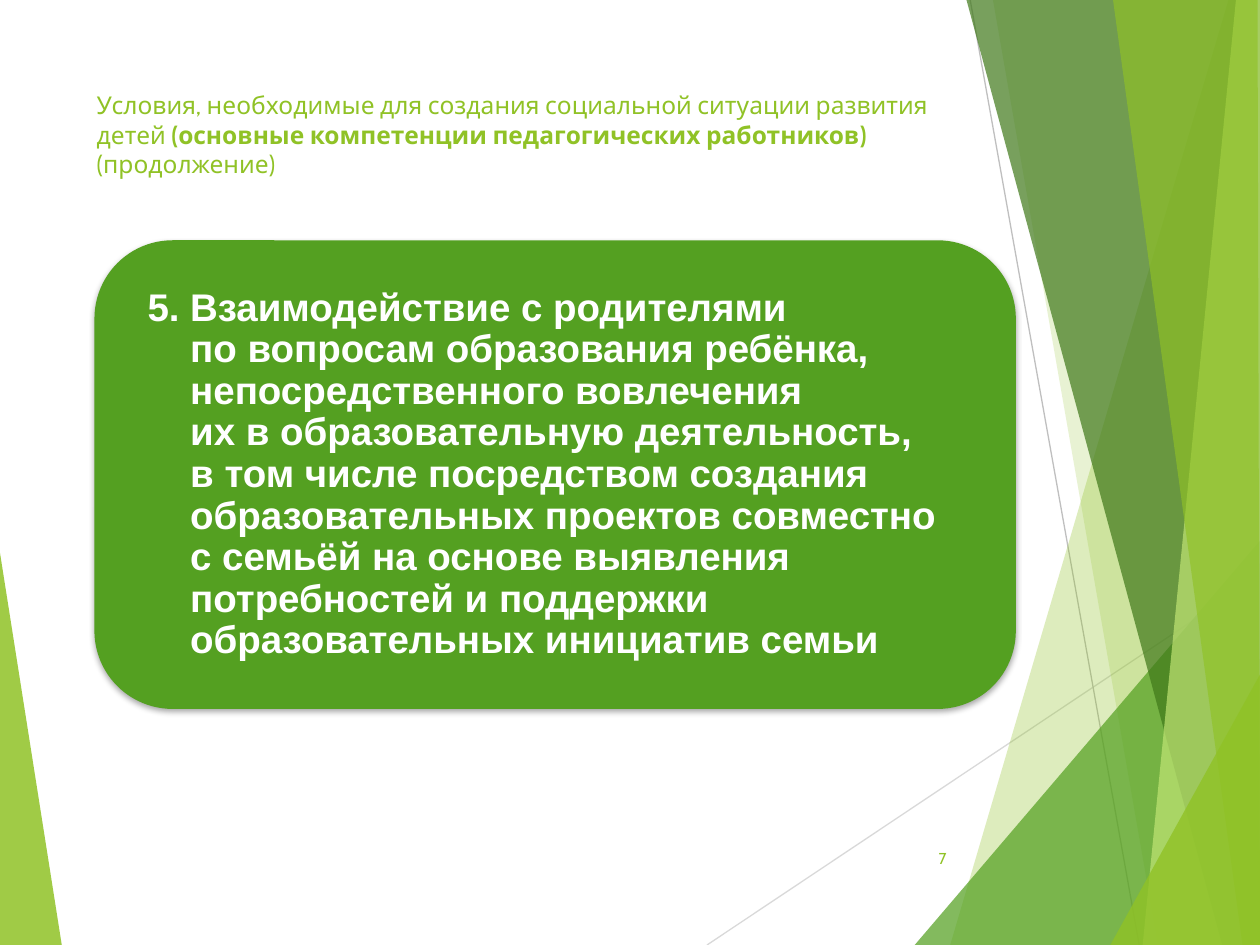
from pptx import Presentation
from pptx.dml.color import RGBColor
from pptx.enum.shapes import MSO_CONNECTOR, MSO_SHAPE
from pptx.enum.text import MSO_ANCHOR, PP_ALIGN
from pptx.oxml.ns import qn
from pptx.util import Pt
from lxml import etree

STRAIGHT = MSO_CONNECTOR.STRAIGHT
ROUNDED = MSO_SHAPE.ROUNDED_RECTANGLE
TOP, MIDDLE = MSO_ANCHOR.TOP, MSO_ANCHOR.MIDDLE
LEFT, RIGHT = PP_ALIGN.LEFT, PP_ALIGN.RIGHT

WIDTH, HEIGHT = 720, 540
COLORS = {
    "lime": "90C226", "green": "54A021", "forest": "3F7819", "pale": "C0E474",
    "white": "FFFFFF", "black": "000000", "light_gray": "D9D9D9", "gray": "BFBFBF",
}


def color(name):
    return RGBColor.from_string(COLORS[name])


def add_span(para, text, font="Cabin", size=14, tint="lime", bold=False):
    """Add formatted text to a paragraph; each newline is a line break."""
    for number, line in enumerate(text.split("\n")):
        if number:
            para.add_line_break()
        span = para.add_run()
        span.text = line
        span.font.name = font
        span.font.size = Pt(size)
        span.font.bold = bold
        span.font.color.rgb = color(tint)


class Page:
    """Current slide together with its shared style."""

    def __init__(self, deck):
        self.slide = deck.slides.add_slide(deck.slide_layouts[6])
        self.shapes = self.slide.shapes
        self.slide.background.fill.solid()
        self.slide.background.fill.fore_color.rgb = color("white")

    def paint(self, shape, tint, opacity=100):
        shape.shadow.inherit = False
        shape.line.fill.background()
        shape.fill.solid()
        shape.fill.fore_color.rgb = color(tint)
        if opacity < 100:
            tone = next(shape.element.iter(qn("a:srgbClr")))
            etree.SubElement(tone, qn("a:alpha"), val=str(opacity * 1000))

    def facet(self, corners, tint, opacity):
        points = [(Pt(x), Pt(y)) for x, y in corners]
        builder = self.shapes.build_freeform(*points[0], scale=1.0)
        builder.add_line_segments(points[1:], close=True)
        self.paint(builder.convert_to_shape(), tint, opacity)

    def line(self, start, end, tint):
        line = self.shapes.add_connector(STRAIGHT, *map(Pt, start + end))
        line.line.color.rgb = color(tint)
        line.line.width = Pt(0.75)
        etree.SubElement(line.element.spPr, qn("a:effectLst"))

    def card(self, frame, tint):
        card = self.shapes.add_shape(ROUNDED, *map(Pt, frame))
        self.paint(card, tint)
        effects = card.element.spPr.find(qn("a:effectLst"))
        shadow = etree.SubElement(effects, qn("a:outerShdw"), blurRad=str(Pt(3)),
                                  dist=str(Pt(2)), dir="5400000", rotWithShape="0")
        tone = etree.SubElement(shadow, qn("a:srgbClr"), val=COLORS["black"])
        etree.SubElement(tone, qn("a:alpha"), val="35000")

    def text(self, frame, anchor=TOP, align=LEFT, insets=(7.2, 3.6)):
        box = self.shapes.add_textbox(*map(Pt, frame)).text_frame
        box.word_wrap = True
        box.vertical_anchor = anchor
        box.margin_left = box.margin_right = Pt(insets[0])
        box.margin_top = box.margin_bottom = Pt(insets[1])
        para = box.paragraphs[0]
        para.alignment = align
        return para


def main():
    deck = Presentation()
    deck.slide_width, deck.slide_height = Pt(WIDTH), Pt(HEIGHT)
    page = Page(deck)

    # Background facets and thin lines
    corner = (WIDTH, HEIGHT)
    page.facet([(0, 316), (35.3, HEIGHT), (0, HEIGHT)], "lime", 85)
    page.line((404, HEIGHT), (WIDTH, 329), "light_gray")
    page.line((554.4, 0), (651, HEIGHT), "gray")
    facets = [
        ([(702, 0), (543, HEIGHT), corner, (WIDTH, 0)], "lime", 30),
        ([(567.4, 0), (661.7, HEIGHT), corner, (WIDTH, 0)], "lime", 20),
        ([(522.7, HEIGHT), (WIDTH, 309), corner], "green", 72),
        ([(552.3, 0), (698.4, HEIGHT), corner, (WIDTH, 0)], "forest", 70),
        ([(706.3, 0), (653, HEIGHT), corner, (WIDTH, 0)], "pale", 70),
        ([(636, 0), (710, HEIGHT), corner, (718.6, 0)], "lime", 65),
        ([(634.5, HEIGHT), (WIDTH, 385.5), corner], "lime", 80),
    ]
    for facet in facets:
        page.facet(*facet)

    # Title
    title = page.text((48.2, 48.2, 499.7, 103.7))
    add_span(title, "Условия, необходимые для создания социальной ситуации развития детей ")
    add_span(title, "(основные компетенции педагогических работников) ", bold=True)
    add_span(title, "(продолжение)")

    # Competence card with a hanging number
    page.card((54, 137.3, 526.5, 267.8), "green")
    body = page.text((67, 150.5, 500.4, 241.9), anchor=MIDDLE, insets=(17.3, 0))
    body.line_spacing = 0.9
    indent = Pt(24.4)
    properties = body._p.get_or_add_pPr()
    properties.set("marL", str(indent))
    properties.set("indent", str(-indent))
    add_span(body, "5. Взаимодействие с родителями\n"
                   "по вопросам образования ребёнка,\n"
                   "непосредственного вовлечения\n"
                   "их в образовательную деятельность,\n"
                   "в том числе посредством создания\n"
                   "образовательных проектов совместно\n"
                   "с семьёй на основе выявления\n"
                   "потребностей и поддержки\n"
                   "образовательных инициатив семьи",
             font="Arial", size=22, tint="white", bold=True)

    # Page number
    number = page.text((507.6, 475.9, 40.3, 28.8), anchor=MIDDLE, align=RIGHT)
    add_span(number, "7", size=9)

    deck.save("out.pptx")


if __name__ == "__main__":
    main()
